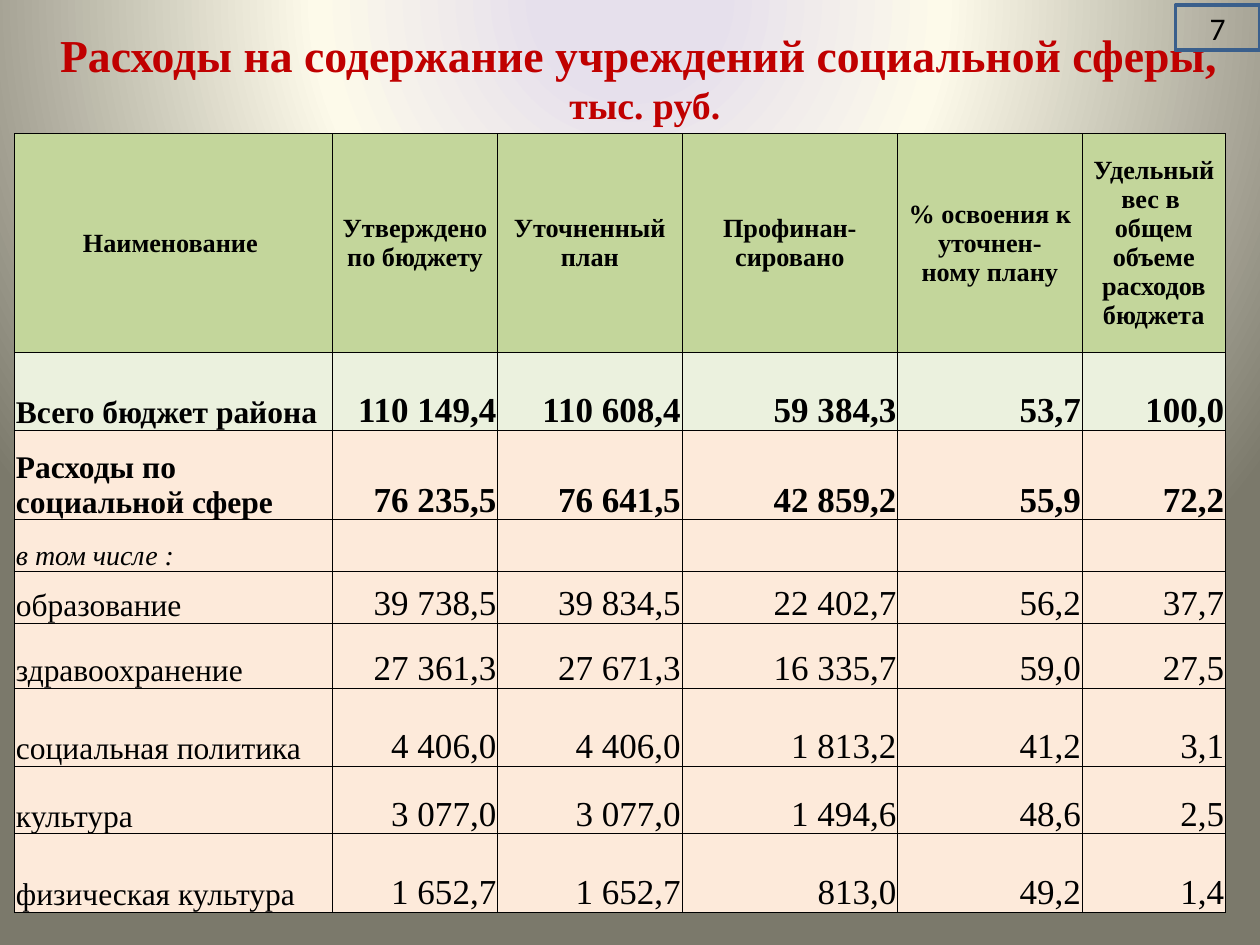
from pptx import Presentation, oxml
from pptx import util as u
from pptx.dml.color import RGBColor
from pptx.enum import shapes, text

BLACK = RGBColor(0x00, 0x00, 0x00)
RED = RGBColor(0xC0, 0x00, 0x00)
BLUE = RGBColor(0x3A, 0x5F, 0x8C)
GREEN = RGBColor(0xC3, 0xD6, 0x9B)
PALE_GREEN = RGBColor(0xEB, 0xF1, 0xDE)
PEACH = RGBColor(0xFD, 0xEA, 0xDA)
LILAC = RGBColor(0xE6, 0xE0, 0xEC)
CREAM = RGBColor(0xFD, 0xFA, 0xEA)
OLIVE = RGBColor(0x7B, 0x79, 0x6B)

SERIF = "Times New Roman"
NAMESPACE = 'xmlns:a="http://schemas.openxmlformats.org/drawingml/2006/main"'
LEFT, CENTER, RIGHT, JUSTIFY = (
    text.PP_ALIGN.LEFT, text.PP_ALIGN.CENTER, text.PP_ALIGN.RIGHT, text.PP_ALIGN.JUSTIFY)
MIDDLE, BOTTOM = text.MSO_ANCHOR.MIDDLE, text.MSO_ANCHOR.BOTTOM

COLUMN_WIDTHS = [181.7, 94.3, 105.4, 123.2, 105.4, 82]
ROW_HEIGHTS = [125, 44.6, 51.2, 29.3, 29.8, 37, 44.6, 38.8, 44.6]
HEADER = ["Наименование ", "Утверждено по бюджету", "Уточненный план", "Профинан-сировано",
          "% освоения к уточнен-\nному плану", "Удельный вес в  общем объеме расходов бюджета"]
TOTALS = [
    ["Всего бюджет района", "110 149,4", "110 608,4", "59 384,3", "53,7", "100,0"],
    ["Расходы по социальной сфере", "76 235,5", "76 641,5", "42 859,2", "55,9", "72,2"],
]
SUBHEADING = ["в том числе :", "", "", "", "", ""]
SECTORS = [
    ["образование", "39 738,5", "39 834,5", "22 402,7", "56,2", "37,7"],
    ["здравоохранение", "27 361,3", "27 671,3", "16 335,7", "59,0", "27,5"],
    ["социальная политика", "4 406,0", "4 406,0", "1 813,2", "41,2", "3,1"],
    ["культура", "3 077,0", "3 077,0", "1 494,6", "48,6", "2,5"],
    ["физическая культура", "1 652,7", "1 652,7", "813,0", "49,2", "1,4"],
]


class SlideBuilder:
    """Draws styled elements on one slide, with lengths in points."""

    def __init__(self, slide, font=SERIF, color=BLACK, border=0.5, margin=0.72):
        self.slide = slide
        self.font = font
        self.color = color
        self.border = border
        self.margin = margin

    def style(self, paragraph, size, align, bold=False, italic=False, color=None, font=None):
        paragraph.alignment = align
        paragraph.font.name = font or self.font
        paragraph.font.size = u.Pt(size)
        paragraph.font.bold = bold
        paragraph.font.italic = italic
        paragraph.font.color.rgb = color or self.color

    def background(self, stops):
        fill = self.slide.background.fill
        fill.solid()
        solid = self.slide.element.xpath("./p:cSld/p:bg/p:bgPr/a:solidFill")[0]
        marks = "".join(f'<a:gs pos="{percent * 1000}"><a:srgbClr val="{color}"/></a:gs>'
                        for percent, color in stops)
        gradient = oxml.parse_xml(
            f'<a:gradFill {NAMESPACE} rotWithShape="1"><a:gsLst>{marks}</a:gsLst>'
            '<a:path path="circle"><a:fillToRect l="50000" t="-80000" r="50000" b="180000"/>'
            '</a:path></a:gradFill>')
        solid.getparent().replace(solid, gradient)

    def title(self, heading, unit, left, top, width, height):
        box = self.slide.shapes.add_textbox(u.Pt(left), u.Pt(top), u.Pt(width), u.Pt(height))
        frame = box.text_frame
        frame.word_wrap = True
        frame.vertical_anchor = BOTTOM
        paragraph = frame.paragraphs[0]
        self.style(paragraph, 26.1, CENTER, bold=True, color=RED)
        paragraph.add_run().text = heading
        paragraph.add_line_break()
        run = paragraph.add_run()
        run.text = unit
        run.font.size = u.Pt(21.6)

    def table(self, left, top, widths, heights):
        frame = self.slide.shapes.add_table(
            len(heights), len(widths), u.Pt(left), u.Pt(top),
            u.Pt(sum(widths)), u.Pt(sum(heights)))
        table = frame.table
        table.first_row = table.horz_banding = False
        for column, width in zip(table.columns, widths):
            column.width = u.Pt(width)
        for row, height in zip(table.rows, heights):
            row.height = u.Pt(height)
        return table

    def row(self, row, values, fill, anchor=BOTTOM, label_size=18, value_size=20,
            label_align=LEFT, value_align=RIGHT, bold=False, italic=False):
        for index, (cell, value) in enumerate(zip(row.cells, values)):
            size, align = (value_size, value_align) if index else (label_size, label_align)
            cell.text = value
            cell.vertical_anchor = anchor
            cell.margin_left = cell.margin_right = cell.margin_top = u.Pt(self.margin)
            cell.margin_bottom = 0
            for paragraph in cell.text_frame.paragraphs:
                self.style(paragraph, size, align, bold, italic)
            self.borders(cell)
            cell.fill.solid()
            cell.fill.fore_color.rgb = fill

    def borders(self, cell):
        properties = cell._tc.get_or_add_tcPr()
        for side in ("lnL", "lnR", "lnT", "lnB"):
            properties.append(oxml.parse_xml(
                f'<a:{side} {NAMESPACE} w="{u.Pt(self.border)}"><a:solidFill>'
                f'<a:srgbClr val="{self.color}"/></a:solidFill></a:{side}>'))

    def page_number(self, number, left, top, width, height):
        shape = self.slide.shapes.add_shape(
            shapes.MSO_SHAPE.RECTANGLE, u.Pt(left), u.Pt(top), u.Pt(width), u.Pt(height))
        shape.shadow.inherit = False
        shape.fill.background()
        shape.line.color.rgb = BLUE
        shape.line.width = u.Pt(2)
        shape.text_frame.text = number
        shape.text_frame.vertical_anchor = MIDDLE
        self.style(shape.text_frame.paragraphs[0], 18, CENTER, font="Calibri")


def main():
    presentation = Presentation()
    presentation.slide_width, presentation.slide_height = u.Pt(720), u.Pt(540)
    builder = SlideBuilder(presentation.slides.add_slide(presentation.slide_layouts[6]))
    builder.background([(11, LILAC), (40, CREAM), (100, OLIVE)])
    builder.title("Расходы на содержание учреждений социальной сферы, ", "тыс. руб.",
                  8.5, 8.5, 720, 67.7)

    rows = iter(builder.table(8.4, 76.3, COLUMN_WIDTHS, ROW_HEIGHTS).rows)
    builder.row(next(rows), HEADER, GREEN, MIDDLE, 15, 15, CENTER, CENTER, bold=True)
    for values, fill in zip(TOTALS, (PALE_GREEN, PEACH)):
        builder.row(next(rows), values, fill, bold=True)
    builder.row(next(rows), SUBHEADING, PEACH, label_size=16, italic=True)
    for values in SECTORS:
        builder.row(next(rows), values, PEACH, label_align=JUSTIFY)

    builder.page_number("7", 671.6, 3, 48.4, 25.7)
    presentation.save("out.pptx")


if __name__ == "__main__":
    main()
